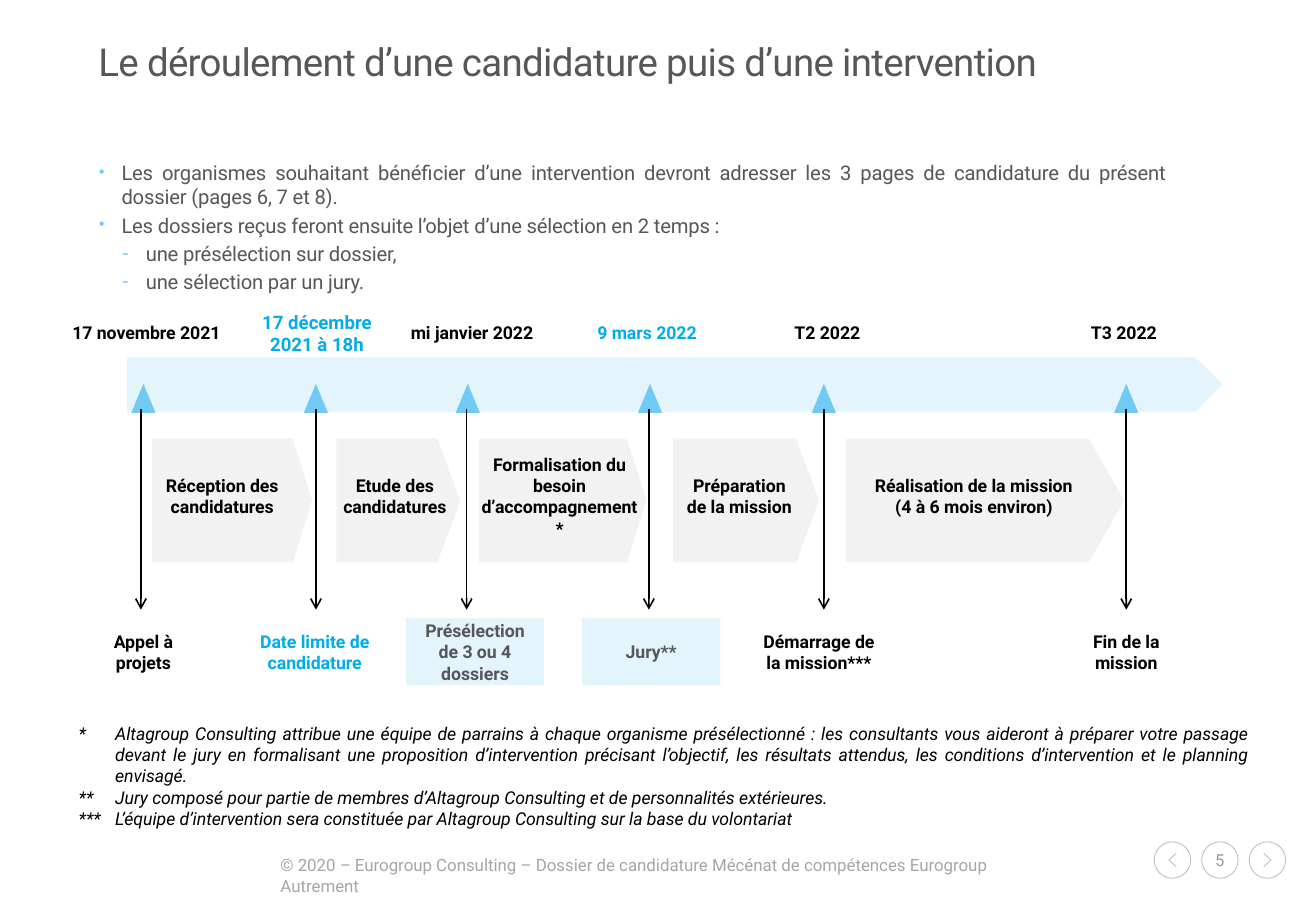
from lxml import etree
from pptx import Presentation
from pptx.dml.color import RGBColor
from pptx.enum import shapes, text
from pptx.oxml import ns
from pptx.util import Pt

FONT = "Roboto"
BLACK, GREY, CYAN = "000000", "57565A", "00ADE9"
SKY, PALE_BLUE, PALE_GREY, RULE = "71CAF3", "E3F4FD", "F2F2F2", "BFBFBF"
CENTER, LEFT, JUSTIFY = text.PP_ALIGN.CENTER, text.PP_ALIGN.LEFT, text.PP_ALIGN.JUSTIFY
TOP, MIDDLE = text.MSO_ANCHOR.TOP, text.MSO_ANCHOR.MIDDLE
SHAPE = shapes.MSO_SHAPE

# date, its centre, width, top and size, marker x, line x, outcome, its centre, colour, boxed
MILESTONES = [
    ("17 novembre 2021", 86.8, 109, 187.2, 10.5, 85, 83.5, "Appel à projets", 85, BLACK, False),
    ("17 décembre 2021 à 18h", 187.9, 91, 180.7, 11, 187.2, 187.2,
     "Date limite de candidature", 186.5, CYAN, False),
    ("mi janvier 2022", 279.7, 96, 187.2, 10.5, 277.2, 276.5,
     "Présélection de 3 ou 4 dossiers", 281.5, BLACK, True),
    ("9 mars 2022", 383.4, 96, 187.2, 10.5, 385.2, 384.5, "Jury**", 385.9, CYAN, True),
    ("T2 2022", 490.3, 105, 187.2, 10.5, 488.2, 488.2,
     "Démarrage de la mission***", 485.3, BLACK, False),
    ("T3 2022", 666, 94, 187.2, 10.5, 667.4, 667.4, "Fin de la mission", 667.4, BLACK, False),
]
# label, arrow left, arrow width, point ratio, label left, label width, side inset
STEPS = [
    ("Réception des candidatures", 90, 95, 0.157, 90.7, 82, 7.2),
    ("Etude des candidatures", 199.4, 73.4, 0.186, 201.6, 64.8, 0),
    ("Formalisation du besoin d’accompagnement*", 283.7, 99.4, 0.159, 284.4, 94.3, 0),
    ("Préparation\nde la mission", 398.9, 86.4, 0.183, 395.3, 85.7, 0),
    ("Réalisation de la mission\n(4 à 6 mois environ)", 501.1, 164.9, 0.283, 503.3, 147.6, 7.2),
]
INTRO = [
    ("•", 13.7, "Les organismes souhaitant bénéficier d’une intervention devront adresser "
     "les 3 pages de candidature du présent dossier (pages 6, 7 et 8)."),
    ("•", 13.7, "Les dossiers reçus feront ensuite l’objet d’une sélection en 2 temps :"),
    ("-", 28.1, "une présélection sur dossier,"),
    ("-", 28.1, "une sélection par un jury."),
]
FOOTNOTES = [
    "*\tAltagroup Consulting attribue une équipe de parrains à chaque organisme présélectionné : "
    "les consultants vous aideront à préparer votre passage devant le jury en formalisant une "
    "proposition d’intervention précisant l’objectif, les résultats attendus, les conditions "
    "d’intervention et le planning envisagé.",
    "**\tJury composé pour partie de membres d’Altagroup Consulting et de personnalités extérieures.",
    "***\tL’équipe d’intervention sera constituée par Altagroup Consulting sur la base du volontariat",
]


def rgb(value):
    return RGBColor.from_string(value)


def write(sp, content, size, color, bold=False, italic=False, align=CENTER,
          anchor=MIDDLE, inset=(7.2, 3.6), spacing=0):
    """Fill a shape with text; inset is (sides, top and bottom), spacing is per letter."""
    tf = sp.text_frame
    tf.text = content
    tf.word_wrap = True
    tf.auto_size = text.MSO_AUTO_SIZE.NONE
    tf.vertical_anchor = anchor
    tf.margin_left = tf.margin_right = Pt(inset[0])
    tf.margin_top = tf.margin_bottom = Pt(inset[1])
    for p in tf.paragraphs:
        p.alignment = align
        for r in p.runs:
            r.font.name, r.font.size = FONT, Pt(size)
            r.font.bold, r.font.italic = bold, italic
            r.font.color.rgb = rgb(color)
            if spacing:
                r.font._element.set("spc", str(round(spacing * 100)))
    return tf


def add_text(s, x, y, w, h, content, size, color, **style):
    sp = s.shapes.add_textbox(Pt(x), Pt(y), Pt(w), Pt(h))
    return write(sp, content, size, color, **style)


def paint(sp, fill=None, line=None):
    sp.shadow.inherit = False
    if fill:
        sp.fill.solid()
        sp.fill.fore_color.rgb = rgb(fill)
    else:
        sp.fill.background()
    if line:
        sp.line.color.rgb = rgb(line)
        sp.line.width = Pt(0.5)
    else:
        sp.line.fill.background()


def add_box(s, kind, x, y, w, h, fill=None, line=None):
    sp = s.shapes.add_shape(kind, Pt(x), Pt(y), Pt(w), Pt(h))
    paint(sp, fill, line)
    return sp


def add_block_arrow(s, x, y, w, h, fill, shaft, point):
    sp = add_box(s, SHAPE.RIGHT_ARROW, x, y, w, h, fill)
    sp.adjustments[0], sp.adjustments[1] = shaft, point


def add_down_arrow(s, x, top, bottom):
    cx = s.shapes.add_connector(shapes.MSO_CONNECTOR.STRAIGHT, Pt(x), Pt(top), Pt(x), Pt(bottom))
    cx.line.color.rgb = rgb(BLACK)
    cx.line.width = Pt(1)
    etree.SubElement(cx.line._get_or_add_ln(), ns.qn("a:tailEnd"), type="arrow")
    etree.SubElement(cx._element.spPr, ns.qn("a:effectLst"))


def hang(p, left, first):
    pPr = p._p.get_or_add_pPr()
    pPr.set("marL", str(Pt(left)))
    pPr.set("indent", str(-Pt(first)))
    return pPr


def add_bullet(p, mark, left):
    pPr = hang(p, left, 13.7)
    color = etree.SubElement(pPr, ns.qn("a:buClr"))
    etree.SubElement(color, ns.qn("a:srgbClr"), val=SKY)
    etree.SubElement(pPr, ns.qn("a:buFont"), typeface=FONT)
    etree.SubElement(pPr, ns.qn("a:buChar"), char=mark)


def add_title(s):
    sp = s.shapes.title
    sp.left, sp.top, sp.width, sp.height = Pt(58.3), Pt(25.2), Pt(663), Pt(26.6)
    tf = write(sp, "Le déroulement d’une candidature puis d’une intervention", 22.8, GREY,
               align=LEFT, inset=(0, 0), spacing=-0.4)
    tf.paragraphs[0].line_spacing = 0.86


def add_intro(s):
    tf = add_text(s, 58.3, 95, 632.9, 80, "\n".join(item[2] for item in INTRO), 12, GREY,
                  align=JUSTIFY, anchor=TOP, inset=(0, 0), spacing=-0.1)
    for i, (p, (mark, left, _)) in enumerate(zip(tf.paragraphs, INTRO)):
        add_bullet(p, mark, left)
        if i:
            p.space_before = Pt(2.4)


def add_step(s, label, x, w, point, label_x, label_w, inset):
    add_block_arrow(s, x, 260, w, 73.4, PALE_GREY, 1, point)
    add_text(s, label_x, 254.9, label_w, 78.5, label, 10.5, BLACK, bold=True, inset=(inset, 3.6))


def add_milestone(s, date, date_x, date_w, date_y, size, marker_x, line_x,
                  outcome, outcome_x, color, boxed):
    add_text(s, date_x - date_w / 2, date_y, date_w, 20, date, size, color, bold=True, anchor=TOP)
    add_box(s, SHAPE.ISOSCELES_TRIANGLE, marker_x - 7.2, 227.5, 14.4, 17.3, SKY)
    add_down_arrow(s, line_x, 242.6, 361.4)
    sp = add_box(s, SHAPE.RECTANGLE, outcome_x - 41, 366.5, 82, 39.6, PALE_BLUE if boxed else None)
    write(sp, outcome, 10.5, GREY if boxed else color, bold=True)


def add_footnotes(s):
    tf = add_text(s, 39.6, 424.8, 707.8, 58.3, "\n".join(FOOTNOTES), 10.5, BLACK,
                  italic=True, align=JUSTIFY, anchor=TOP)
    for p in tf.paragraphs:
        hang(p, 21.6, 21.6)


def add_chevron(s, x, y, direction):
    """Draw an open chevron pointing left (-1) or right (1)."""
    back, tip = x - 2.2 * direction, x + 2.2 * direction
    fb = s.shapes.build_freeform(Pt(back), Pt(y - 4))
    fb.add_line_segments([(Pt(tip), Pt(y)), (Pt(back), Pt(y + 4))], close=False)
    paint(fb.convert_to_shape(), line=RULE)


def add_footer(s):
    add_text(s, 159.1, 503.3, 465.8, 32,
             "© 2020 – Eurogroup Consulting – Dossier de candidature Mécénat de compétences "
             "Eurogroup Autrement", 10, "A6A6A6", align=LEFT, anchor=TOP)
    previous, page, following = [
        add_box(s, SHAPE.OVAL, 684 + 28.1 * i, 499, 21.6, 21.6, line=RULE) for i in range(3)]
    write(page, "5", 9.8, "9A9A9B", inset=(0, 0))
    for circle, direction in ((previous, -1), (following, 1)):
        add_chevron(s, circle.left.pt + 10.8, 509.8, direction)


def main():
    prs = Presentation()
    prs.slide_width, prs.slide_height = Pt(779.8), Pt(540)
    s = prs.slides.add_slide(prs.slide_layouts[5])
    add_title(s)
    add_intro(s)
    add_block_arrow(s, 75, 211.7, 649.4, 32.4, PALE_BLUE, 0.99, 0.5)
    for step in STEPS:
        add_step(s, *step)
    for milestone in MILESTONES:
        add_milestone(s, *milestone)
    add_footnotes(s)
    add_footer(s)
    prs.save("out.pptx")


if __name__ == "__main__":
    main()
